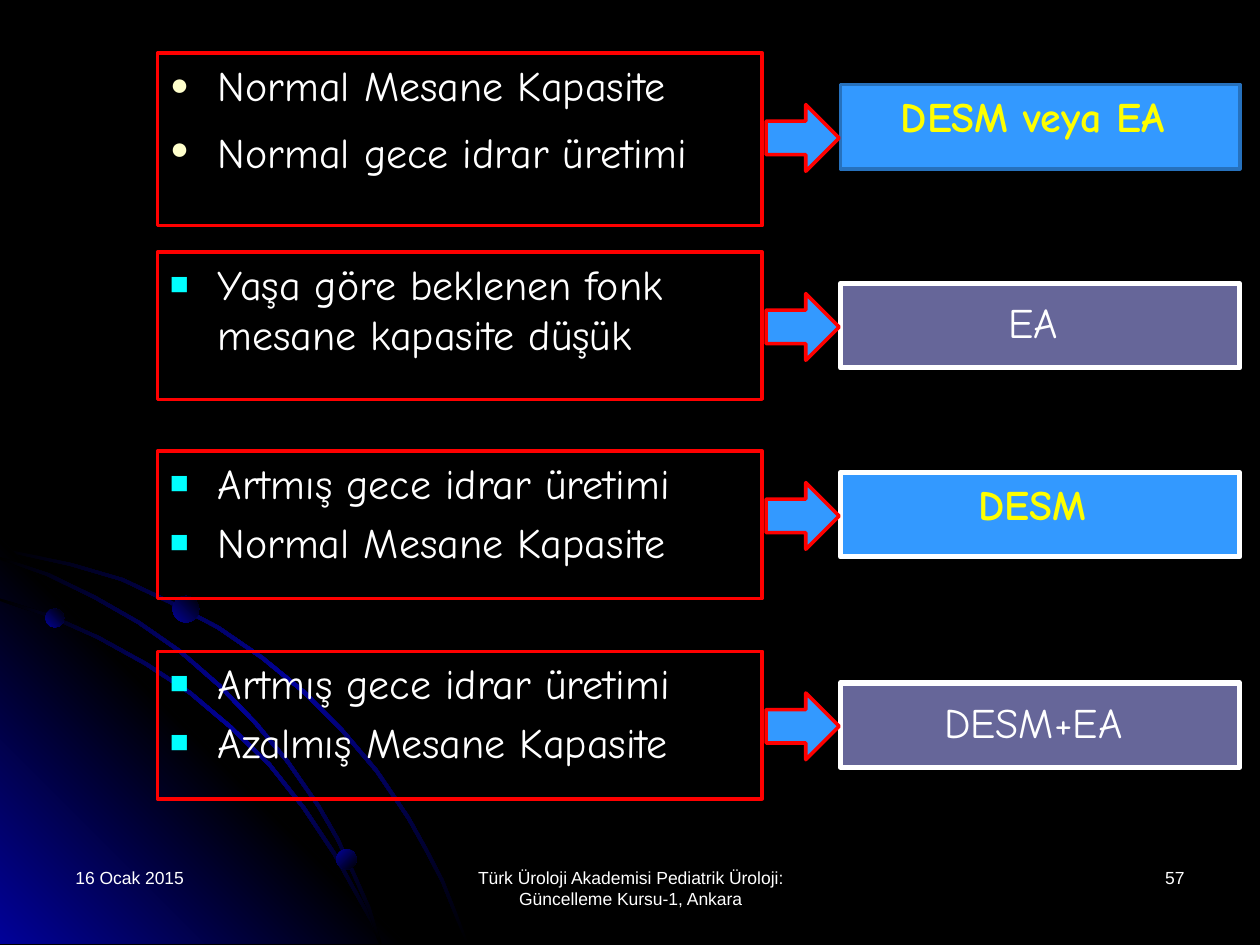
from copy import deepcopy
from dataclasses import dataclass

from lxml import etree
from pptx import Presentation
from pptx.dml.color import RGBColor
from pptx.enum import shapes, text
from pptx.oxml import ns
from pptx.util import Inches, Pt


@dataclass(frozen=True)
class Theme:
    black: str = "000000"
    navy: str = "010199"
    white: str = "FFFFFF"
    red: str = "FF0000"
    yellow: str = "FFFF00"
    cream: str = "FFFFCC"
    cyan: str = "00FFFF"
    blue: str = "3399FF"
    blue_edge: str = "2671BD"
    violet: str = "666699"
    font: str = "Comic Neue"
    small_font: str = "Arial"
    size: int = 24
    space_size: int = 28
    small_size: int = 10


THEME = Theme()
LEFT, CENTER, RIGHT = text.PP_ALIGN.LEFT, text.PP_ALIGN.CENTER, text.PP_ALIGN.RIGHT

# Upper edges of the three arcs in the corner
ARCS = [
    [(0, 4.35), (0.57, 4.47), (0.98, 4.59), (1.36, 4.77), (1.74, 4.97), (2.09, 5.21), (2.42, 5.48),
     (2.72, 5.78), (3, 6.11), (3.25, 6.48), (3.39, 6.73), (3.52, 6.98), (3.62, 7.23), (3.72, 7.49)],
    [(0, 4.75), (0.41, 4.88), (0.79, 5.05), (1.17, 5.26), (1.52, 5.49), (1.84, 5.76), (2.15, 6.06),
     (2.42, 6.4), (2.66, 6.76), (2.86, 7.12), (2.96, 7.3), (3.03, 7.49)],
    [(0, 4.42), (0.39, 4.55), (0.76, 4.73), (1.11, 4.93), (1.44, 5.16), (1.75, 5.43), (2.04, 5.73),
     (2.29, 6.03), (2.54, 6.39), (2.69, 6.65), (2.82, 6.93), (2.94, 7.2), (3.03, 7.49)],
]
CORNER = [(0, 4.27), (3.22, 7.49), (0, 7.49)]
DOTS = [(0.36, 4.83, 0.15, 45), (2.67, 6.74, 0.16, 315), (1.37, 4.73, 0.21, 45)]

# Conditions (top, height, lines), outcome (top, text, highlighted), arrow top
ROWS = [
    ((0.42, 1.37, ["Normal Mesane Kapasite", "Normal gece idrar üretimi"]),
     (0.67, "DESM veya EA", True), 0.83),
    ((2, 1.17, ["Yaşa göre beklenen fonk mesane kapasite düşük"]),
     (2.25, "EA", False), 2.33),
    ((3.58, 1.17, ["Artmış gece idrar üretimi", "Normal Mesane Kapasite"]),
     (3.75, "DESM", True), 3.83),
    ((5.17, 1.17, ["Artmış gece idrar üretimi", "Azalmış Mesane Kapasite"]),
     (5.42, "DESM+EA", False), 5.5),
]
FOOTER = [
    (0.5, 2.33, "16 Ocak 2015", LEFT),
    (7.17, 2.33, "57", RIGHT),
    (3.42, 3.17, "Türk Üroloji Akademisi Pediatrik Üroloji: Güncelleme Kursu-1, Ankara", CENTER),
]


def rgb(value):
    return RGBColor.from_string(value)


def paint(shape, fill=None, line=None, width=2):
    """Set solid fill and line; None leaves either one empty."""
    if fill:
        shape.fill.solid()
        shape.fill.fore_color.rgb = rgb(fill)
    else:
        shape.fill.background()
    if line:
        shape.line.color.rgb = rgb(line)
        shape.line.width = Pt(width)
    else:
        shape.line.fill.background()


def paint_gradient(shape, colors, angle):
    """Spread the colours evenly along a counter-clockwise angle."""
    shape.shadow.inherit = False
    shape.line.fill.background()
    shape.fill.gradient()
    shape.fill.gradient_angle = angle
    stop_list = shape._element.spPr.find(".//" + ns.qn("a:gsLst"))
    while len(stop_list) < len(colors):
        stop_list.append(deepcopy(stop_list[-1]))
    for i, (stop, color) in enumerate(zip(shape.fill.gradient_stops, colors)):
        stop.color.rgb = rgb(color)
        stop.position = i / (len(colors) - 1)


def format_list_item(paragraph, bullet=None, bullet_color=None):
    """Hanging indent, 20% space before and an optional bullet."""
    props = paragraph._p.get_or_add_pPr()
    props.set("marL", str(Inches(0.38)))
    props.set("indent", str(Inches(-0.38)))

    def add(parent, tag, **attributes):
        return etree.SubElement(parent, ns.qn(tag), attributes)

    add(add(props, "a:spcBef"), "a:spcPct", val="20000")
    if bullet:
        add(add(props, "a:buClr"), "a:srgbClr", val=bullet_color)
        add(props, "a:buSzPct", val="75000")
        add(props, "a:buFont", typeface=THEME.small_font)
        add(props, "a:buChar", char=bullet)
    else:
        add(props, "a:buNone")


def add_run(paragraph, words, font=THEME.font, size=THEME.size, color=THEME.white, bold=False):
    run = paragraph.add_run()
    run.text = words
    run.font.name, run.font.size, run.font.bold = font, Pt(size), bold
    run.font.color.rgb = rgb(color)


def write(shape, lines, align=LEFT, listed=True, bullet=None, bullet_color=None,
          wide_space=False, **font):
    """Fill a shape with paragraphs; wide_space ends the last with a large blank."""
    frame = shape.text_frame
    frame.word_wrap = True
    frame.auto_size = text.MSO_AUTO_SIZE.NONE
    frame.vertical_anchor = text.MSO_ANCHOR.TOP
    for i, line in enumerate(lines):
        paragraph = frame.add_paragraph() if i else frame.paragraphs[0]
        paragraph.alignment = align
        if listed:
            format_list_item(paragraph, bullet, bullet_color)
        add_run(paragraph, line, **font)
    if wide_space:
        add_run(paragraph, " ", font=THEME.small_font, size=THEME.space_size)


def add_preset(slide, kind, left, top, width, height):
    shape = slide.shapes.add_shape(kind, *map(Inches, (left, top, width, height)))
    shape.shadow.inherit = False
    return shape


def add_outline(slide, points):
    start, *rest = [(Inches(x), Inches(y)) for x, y in points]
    builder = slide.shapes.build_freeform(*start)
    builder.add_line_segments(rest, close=True)
    return builder.convert_to_shape()


def add_arc(slide, edge, thickness=0.02):
    lower = [(max(0, x - thickness), min(7.49, y + thickness)) for x, y in reversed(edge)]
    paint_gradient(add_outline(slide, edge + lower), (THEME.black, THEME.navy, THEME.black), 315)


def add_backdrop(slide):
    slide.background.fill.solid()
    slide.background.fill.fore_color.rgb = rgb(THEME.black)
    add_arc(slide, ARCS[0])
    paint_gradient(add_outline(slide, CORNER), (THEME.navy, THEME.black, THEME.navy), 45)
    for edge in ARCS[1:]:
        add_arc(slide, edge)
    for left, top, size, angle in DOTS:
        dot = add_preset(slide, shapes.MSO_SHAPE.OVAL, left, top, size, size)
        paint_gradient(dot, (THEME.navy, THEME.black), angle)


def add_conditions(slide, top, height, lines, body=None):
    """List in a red frame, set in the body placeholder when one is given."""
    place = (1.25, top, 4.8, height)
    box = body or add_preset(slide, shapes.MSO_SHAPE.RECTANGLE, *place)
    box.left, box.top, box.width, box.height = map(Inches, place)
    paint(box, line=THEME.red)
    bullet, color = ("●", THEME.cream) if body else ("■", THEME.cyan)
    write(box, lines, bullet=bullet, bullet_color=color, wide_space=bool(body))


def add_outcome(slide, top, label, highlighted, first):
    box = add_preset(slide, shapes.MSO_SHAPE.RECTANGLE, 6.67, top, 3.17, 0.67)
    edge, width = (THEME.blue_edge, 2) if first else (THEME.white, 3)
    paint(box, THEME.blue if highlighted else THEME.violet, edge, width)
    if highlighted:
        write(box, [label + " "], CENTER, color=THEME.yellow, bold=True)
    else:
        write(box, [label], CENTER, wide_space=True)


def add_arrow(slide, top):
    arrow = add_preset(slide, shapes.MSO_SHAPE.RIGHT_ARROW, 6.08, top, 0.58, 0.53)
    paint(arrow, THEME.blue, THEME.red)


def add_footer(slide, left, width, words, align):
    box = slide.shapes.add_textbox(*map(Inches, (left, 6.83, width, 0.5)))
    write(box, [words], align, listed=False, font=THEME.small_font, size=THEME.small_size)


def main():
    deck = Presentation()
    deck.slide_width, deck.slide_height = Inches(10), Inches(7.5)
    slide = deck.slides.add_slide(deck.slide_layouts[1])
    title, body = slide.placeholders
    title._element.getparent().remove(title._element)
    add_backdrop(slide)
    slide.shapes._spTree.append(body._element)
    for i, (conditions, outcome, _) in enumerate(ROWS):
        add_conditions(slide, *conditions, body=None if i else body)
        add_outcome(slide, *outcome, first=i == 0)
    for _, _, arrow_top in ROWS:
        add_arrow(slide, arrow_top)
    for part in FOOTER:
        add_footer(slide, *part)
    deck.save("out.pptx")


if __name__ == "__main__":
    main()
